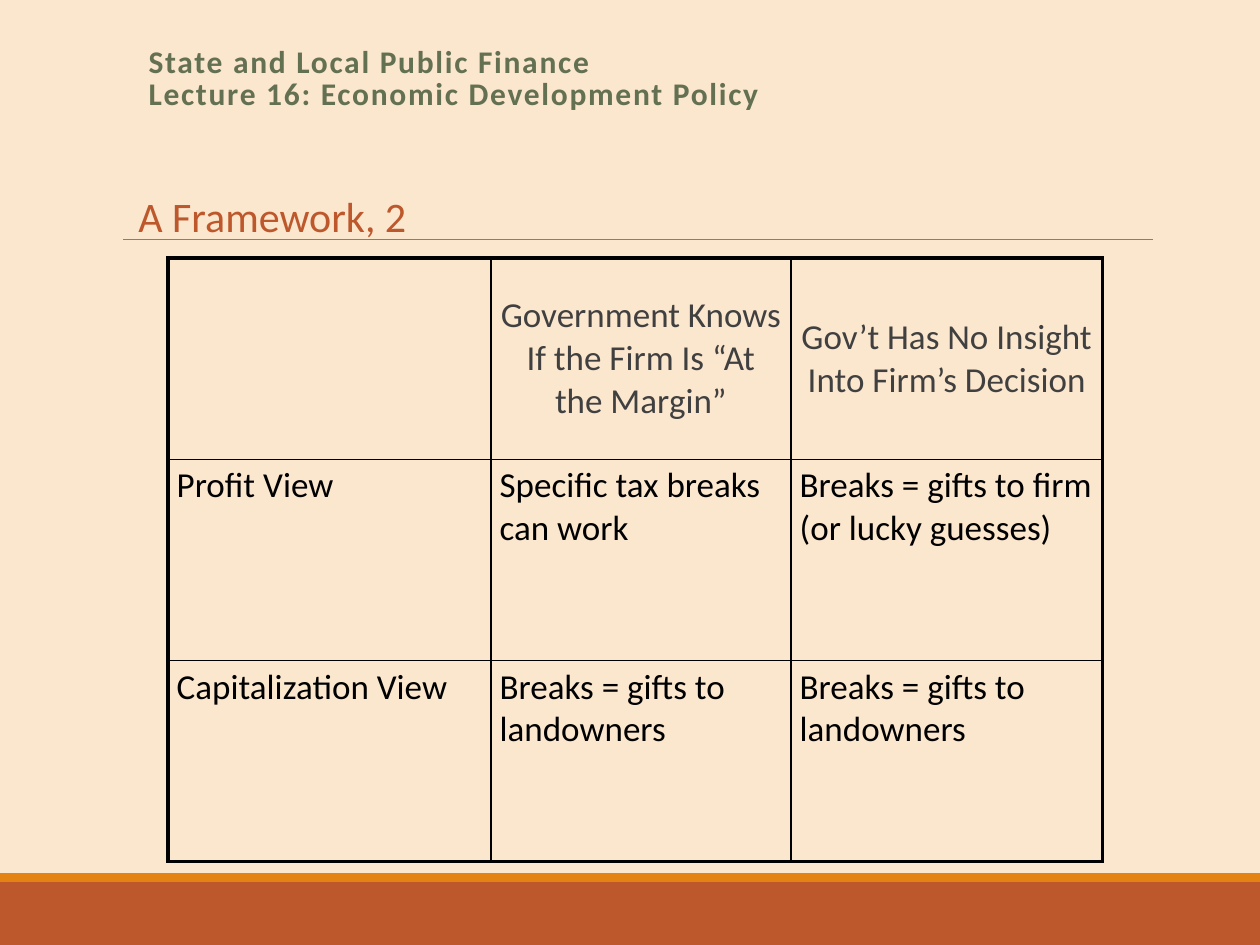
from lxml.etree import SubElement
from pptx import Presentation
from pptx.dml.color import RGBColor
from pptx.enum.shapes import MSO_CONNECTOR, MSO_SHAPE
from pptx.enum.text import MSO_ANCHOR, MSO_AUTO_SIZE, PP_ALIGN
from pptx.oxml.ns import qn
from pptx.util import Pt

CREAM = RGBColor(0xFB, 0xE6, 0xCE)
RUST = RGBColor(0xBD, 0x58, 0x2C)
ORANGE = RGBColor(0xE4, 0x83, 0x12)
GRAY = RGBColor(0x80, 0x80, 0x80)
GREEN = RGBColor(0x63, 0x70, 0x52)
DARK = RGBColor(0x40, 0x40, 0x40)
BLACK = RGBColor(0, 0, 0)

ROWS = [
    ["", "Government Knows If the Firm Is “At the Margin”",
     "Gov’t Has No Insight Into Firm’s Decision"],
    ["Profit View", "Specific tax breaks can work",
     "Breaks = gifts to firm (or lucky guesses)"],
    ["Capitalization View", "Breaks = gifts to landowners",
     "Breaks = gifts to landowners"],
]
WIDTHS = [184.5, 171.5, 178]
HEIGHT = 115
THICK, THIN = 2.25, 1


def apply(item, style):
    for name, value in style.items():
        setattr(item, name, value)


def write(para, text, size, color, bold=False, **style):
    para.text = text
    apply(para, style)
    for run in para.runs:
        apply(run.font, {"name": "Calibri", "size": Pt(size), "bold": bold})
        run.font.color.rgb = color


def add_band(slide, top, height, color):
    band = slide.shapes.add_shape(
        MSO_SHAPE.RECTANGLE, Pt(0), Pt(top), Pt(720), Pt(height))
    band.shadow.inherit = False
    band.fill.solid()
    band.fill.fore_color.rgb = color
    band.line.fill.background()


def add_rule(slide, left, right, top):
    rule = slide.shapes.add_connector(
        MSO_CONNECTOR.STRAIGHT, Pt(left), Pt(top), Pt(right), Pt(top))
    rule.line.color.rgb = GRAY
    rule.line.width = Pt(0.5)
    SubElement(rule.element.spPr, qn("a:effectLst"))


def add_text(slide, box, text, wrap=True, **style):
    frame = slide.shapes.add_textbox(*map(Pt, box)).text_frame
    frame.word_wrap = wrap
    if not wrap:
        frame.auto_size = MSO_AUTO_SIZE.SHAPE_TO_FIT_TEXT
    para = frame.paragraphs[0]
    write(para, text, **style)
    return para


def add_edge(cell, side, width):
    edge = SubElement(cell._tc.get_or_add_tcPr(), qn(f"a:ln{side}"),
                      w=str(Pt(width)))
    fill = SubElement(edge, qn("a:solidFill"))
    SubElement(fill, qn("a:srgbClr"), val=str(BLACK))


def fill_cell(cell, row, col, text):
    head = row == 0
    apply(cell, {
        "margin_left": Pt(5), "margin_right": Pt(5),
        "margin_top": Pt(3), "margin_bottom": Pt(3),
        "vertical_anchor": MSO_ANCHOR.MIDDLE if head else MSO_ANCHOR.TOP})
    outer = {"L": col == 0, "R": col == len(WIDTHS) - 1,
             "T": head, "B": row == len(ROWS) - 1}
    for side, thick in outer.items():
        add_edge(cell, side, THICK if thick else THIN)
    cell.fill.background()
    write(cell.text_frame.paragraphs[0], text, 20, DARK if head else BLACK,
          alignment=PP_ALIGN.CENTER if head else PP_ALIGN.LEFT,
          space_before=Pt(4))


def add_grid(slide, left, top):
    grid = slide.shapes.add_table(
        len(ROWS), len(WIDTHS), Pt(left), Pt(top),
        Pt(sum(WIDTHS)), Pt(HEIGHT * len(ROWS))).table
    apply(grid, {"first_row": False, "horz_banding": False})
    for column, width in zip(grid.columns, WIDTHS):
        column.width = Pt(width)
    for row, texts in enumerate(ROWS):
        grid.rows[row].height = Pt(HEIGHT)
        for col, text in enumerate(texts):
            fill_cell(grid.cell(row, col), row, col, text)


def main():
    deck = Presentation()
    apply(deck, {"slide_width": Pt(720), "slide_height": Pt(540)})
    slide = deck.slides.add_slide(deck.slide_layouts[6])
    slide.background.fill.solid()
    slide.background.fill.fore_color.rgb = CREAM
    add_band(slide, 504, 36, RUST)
    add_band(slide, 499, 5, ORANGE)
    add_rule(slide, 70.5, 659, 136.8)
    add_grid(slide, 96, 147.5)
    head = add_text(
        slide, (77.8, 23.8, 594, 46.8),
        "State and Local Public Finance\nLecture 16: Economic Development Policy",
        size=18, color=GREEN, bold=True, line_spacing=0.85)
    for run in head.runs:
        run.font._element.set("spc", "100")
    title = add_text(
        slide, (72, 108.7, 169, 33), "A Framework, 2", wrap=False,
        size=24, color=RUST, line_spacing=0.9,
        space_before=Pt(6.8), space_after=Pt(1.1))
    indent = Pt(4.5)
    for name, value in {"marL": indent, "indent": -indent}.items():
        title._p.get_or_add_pPr().set(name, str(value))
    deck.save("out.pptx")


if __name__ == "__main__":
    main()
